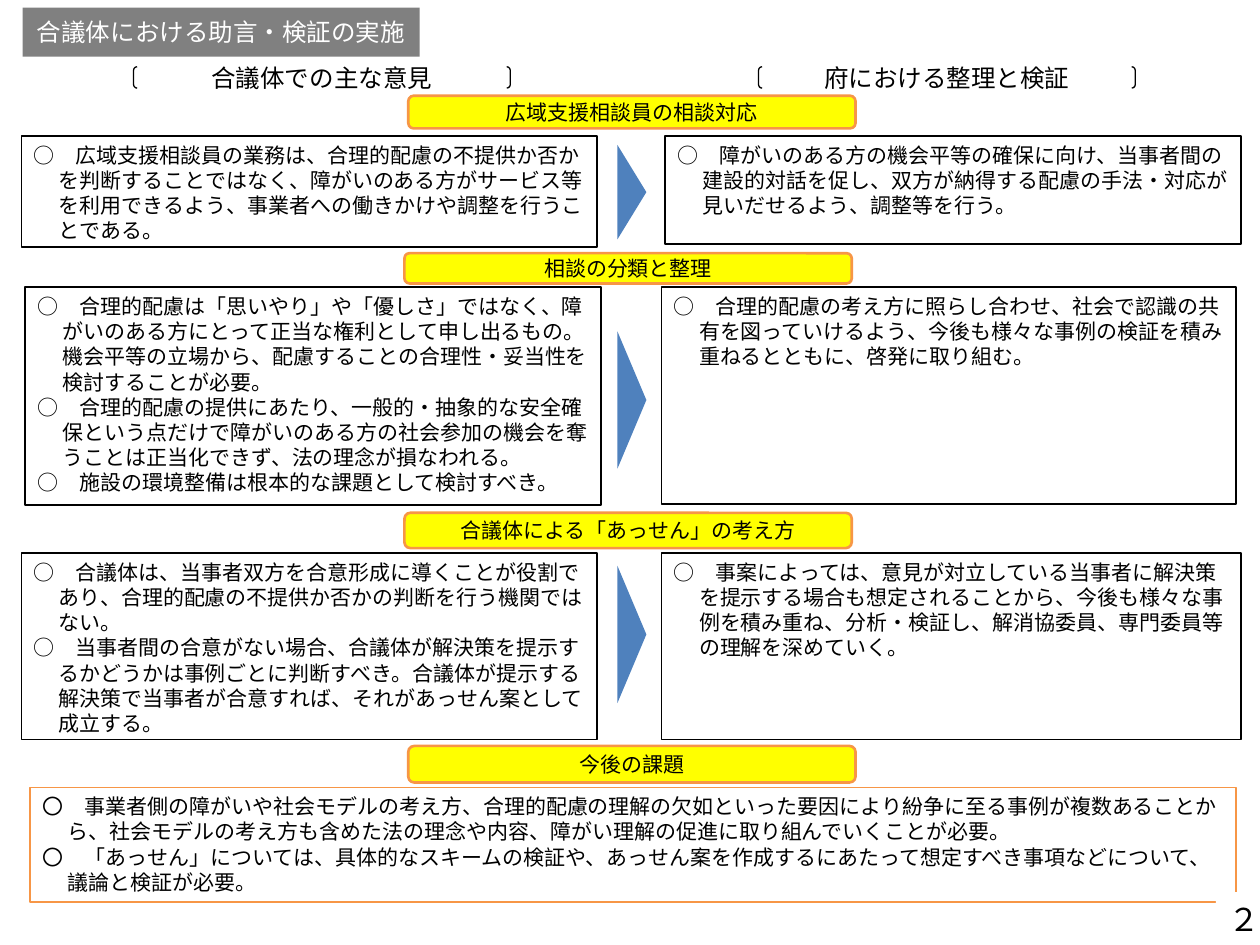
from dataclasses import dataclass

from lxml import etree
from pptx import Presentation
from pptx.dml.color import RGBColor
from pptx.enum import shapes, text
from pptx.oxml import ns
from pptx.util import Inches, Pt

KIND = shapes.MSO_SHAPE
ALIGN = text.PP_ALIGN


@dataclass(frozen=True)
class Theme:
    font: str = "Noto Sans CJK JP"
    digit: str = "Calibri"
    black: str = "000000"
    white: str = "FFFFFF"
    gray: str = "808080"
    orange: str = "F79646"
    yellow: str = "FFFF00"
    blue: str = "4F81BD"
    body: int = 12
    head: int = 14
    page: int = 18
    indent: float = 0.2


class Deck:
    def __init__(self, theme):
        self.theme = theme
        self.prs = Presentation()
        self.prs.slide_width = Inches(10)
        self.prs.slide_height = Inches(7.5)
        self.slide = self.prs.slides.add_slide(self.prs.slide_layouts[6])

    def shape(self, kind, at, fill=None, line=None, width=1):
        item = self.slide.shapes.add_shape(kind, *map(Inches, at))
        item.shadow.inherit = False
        if fill:
            item.fill.solid()
            item.fill.fore_color.rgb = RGBColor.from_string(fill)
        else:
            item.fill.background()
        if line:
            item.line.color.rgb = RGBColor.from_string(line)
            item.line.width = Pt(width)
        else:
            item.line.fill.background()
        return item

    def add_run(self, para, words, size, color=None, font=None):
        """Add one run, with the font set for Latin and East Asian text."""
        run = para.add_run()
        run.text = words
        run.font.size = Pt(size)
        run.font.color.rgb = RGBColor.from_string(color or self.theme.black)
        run.font.name = font or self.theme.font
        props = run._r.get_or_add_rPr()
        east = etree.SubElement(props, ns.qn("a:ea"))
        east.set("typeface", font or self.theme.font)

    def center(self, item, words, size, color=None, font=None):
        frame = item.text_frame
        frame.word_wrap = True
        frame.vertical_anchor = text.MSO_ANCHOR.MIDDLE
        para = frame.paragraphs[0]
        para.alignment = ALIGN.CENTER
        self.add_run(para, words, size, color, font)

    def title(self, at, words):
        item = self.shape(KIND.RECTANGLE, at, self.theme.gray)
        self.center(item, words, self.theme.head, self.theme.white)

    def bracket(self, left, words):
        at = (left, 0.53, 2.99, 0.17)
        item = self.shape(KIND.DOUBLE_BRACKET, at, line=self.theme.black, width=0.75)
        self.center(item, words, self.theme.head)

    def label(self, left, top, high, words):
        at = (left, top, 3.55, high)
        item = self.shape(KIND.ROUNDED_RECTANGLE, at, self.theme.yellow,
                          self.theme.orange, 1.5)
        self.center(item, words, self.theme.body)

    def box(self, at, points, mark="○", line=None):
        """Draw a framed list whose points hang behind a circle mark."""
        item = self.shape(KIND.RECTANGLE, at, self.theme.white,
                          line or self.theme.black)
        frame = item.text_frame
        frame.word_wrap = True
        frame.vertical_anchor = text.MSO_ANCHOR.TOP
        for i, point in enumerate(points):
            para = frame.add_paragraph() if i else frame.paragraphs[0]
            para.alignment = ALIGN.LEFT
            props = para._p.get_or_add_pPr()
            props.set("marL", str(Inches(self.theme.indent)))
            props.set("indent", str(-Inches(self.theme.indent)))
            self.add_run(para, f"{mark}　{point}", self.theme.body)

    def arrow(self, left, top, span):
        at = (left, top, span, 0.23)
        self.shape(KIND.ISOSCELES_TRIANGLE, at, self.theme.blue).rotation = 90

    def page(self, number):
        item = self.shape(KIND.RECTANGLE, (9.65, 7.08, 0.35, 0.42), self.theme.white)
        self.center(item, number, self.theme.page, font=self.theme.digit)


# Each topic: label (left, top, height, words), opinions, review, arrow
TOPICS = [
    ((3.24, 0.76, 0.26, "広域支援相談員の相談対応"),
     (0.17, 1.08, 4.57, 0.88),
     ["広域支援相談員の業務は、合理的配慮の不提供か否かを判断することではなく、"
      "障がいのある方がサービス等を利用できるよう、事業者への働きかけや調整を行うことである。"],
     (5.28, 1.08, 4.57, 0.86),
     ["障がいのある方の機会平等の確保に向け、当事者間の建設的対話を促し、"
      "双方が納得する配慮の手法・対応が見いだせるよう、調整等を行う。"],
     (4.64, 1.41, 0.75)),
    ((3.21, 2.01, 0.24, "相談の分類と整理"),
     (0.2, 2.28, 4.57, 1.73),
     ["合理的配慮は「思いやり」や「優しさ」ではなく、障がいのある方にとって正当な権利として"
      "申し出るもの。機会平等の立場から、配慮することの合理性・妥当性を検討することが必要。",
      "合理的配慮の提供にあたり、一般的・抽象的な安全確保という点だけで障がいのある方の"
      "社会参加の機会を奪うことは正当化できず、法の理念が損なわれる。",
      "施設の環境整備は根本的な課題として検討すべき。"],
     (5.25, 2.28, 4.56, 1.72),
     ["合理的配慮の考え方に照らし合わせ、社会で認識の共有を図っていけるよう、"
      "今後も様々な事例の検証を積み重ねるとともに、啓発に取り組む。"],
     (4.47, 3.06, 1.09)),
    ((3.21, 4.07, 0.28, "合議体による「あっせん」の考え方"),
     (0.17, 4.39, 4.57, 1.48),
     ["合議体は、当事者双方を合意形成に導くことが役割であり、"
      "合理的配慮の不提供か否かの判断を行う機関ではない。",
      "当事者間の合意がない場合、合議体が解決策を提示するかどうかは事例ごとに判断すべき。"
      "合議体が提示する解決策で当事者が合意すれば、それがあっせん案として成立する。"],
     (5.25, 4.39, 4.6, 1.48),
     ["事案によっては、意見が対立している当事者に解決策を提示する場合も想定されることから、"
      "今後も様々な事例を積み重ね、分析・検証し、解消協委員、専門委員等の理解を深めていく。"],
     (4.47, 4.92, 1.09)),
]

ISSUES = [
    "事業者側の障がいや社会モデルの考え方、合理的配慮の理解の欠如といった要因により紛争に至る事例が"
    "複数あることから、社会モデルの考え方も含めた法の理念や内容、障がい理解の促進に取り組んでいくことが必要。",
    "「あっせん」については、具体的なスキームの検証や、あっせん案を作成するにあたって"
    "想定すべき事項などについて、議論と検証が必要。",
]


def main():
    theme = Theme()
    deck = Deck(theme)
    deck.title((0.18, 0.06, 3.15, 0.39), "合議体における助言・検証の実施")
    deck.bracket(1.06, "合議体での主な意見")
    deck.bracket(6.02, "府における整理と検証")
    for label, left, views, right, review, arrow in TOPICS:
        deck.box(right, review)
        deck.box(left, views)
        deck.label(*label)
        deck.arrow(*arrow)
    deck.box((0.24, 6.25, 9.57, 0.91), ISSUES, "〇", theme.orange)
    deck.label(3.24, 5.92, 0.29, "今後の課題")
    deck.page("２")
    deck.prs.save("out.pptx")


if __name__ == "__main__":
    main()
